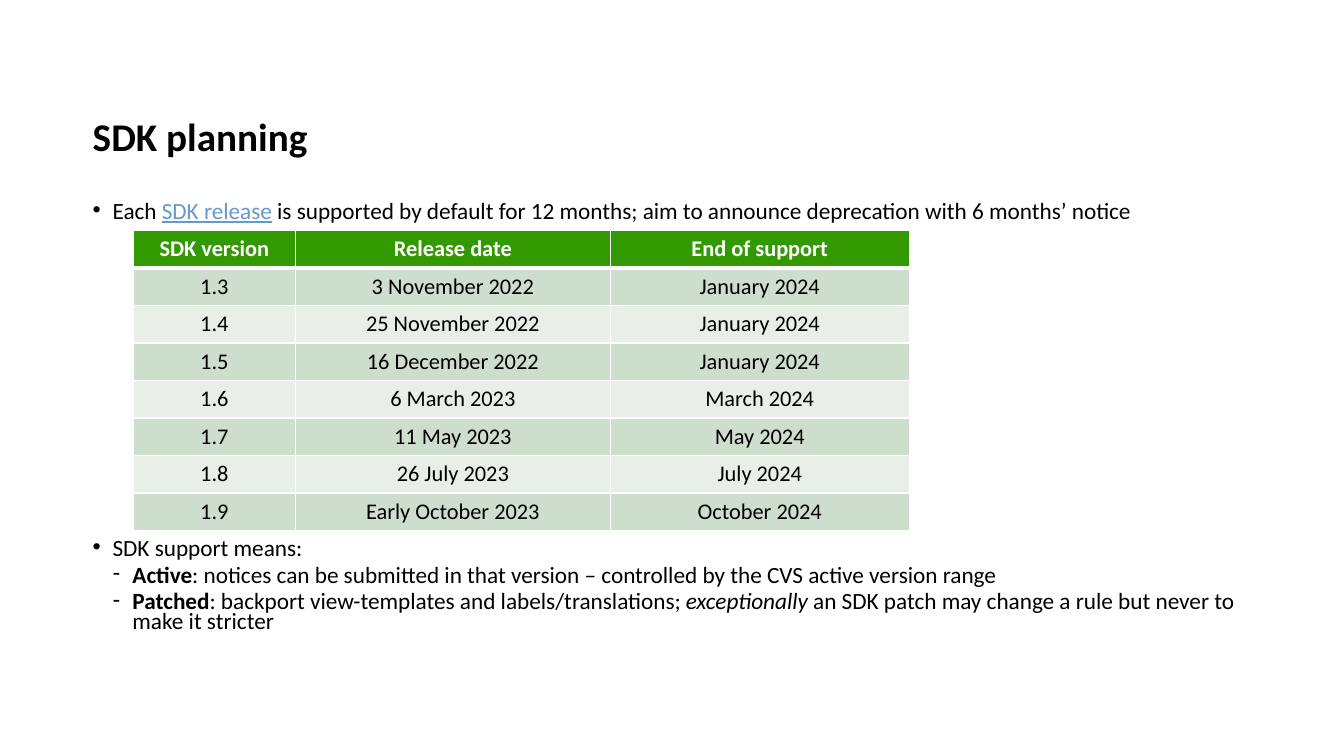
"""Build the SDK planning slide."""
from lxml.etree import SubElement
from pptx import Presentation
from pptx.dml.color import RGBColor as RGB
from pptx.enum.text import MSO_ANCHOR as Anchor, MSO_AUTO_SIZE as AutoSize, PP_ALIGN as Align
from pptx.oxml.ns import qn
from pptx.util import Inches, Pt

COLORS = {"text": "000000", "white": "FFFFFF", "link": "6699CC",
          "head": "339900", "odd": "CEDECC", "even": "E8EFE7"}
RELEASES = [
    ("SDK version", "Release date", "End of support"),
    ("1.3", "3 November 2022", "January 2024"),
    ("1.4", "25 November 2022", "January 2024"),
    ("1.5", "16 December 2022", "January 2024"),
    ("1.6", "6 March 2023", "March 2024"),
    ("1.7", "11 May 2023", "May 2024"),
    ("1.8", "26 July 2023", "July 2024"),
    ("1.9", "Early October 2023", "October 2024"),
]
POINTS = [
    (0, 0, [("Each ", ""), ("SDK release", "link"),
            (" is supported by default for 12 months; aim to announce "
             "deprecation with 6 months’ notice", "")]),
    (0, 227, [("SDK support means:", "")]),
    (1, 5, [("Active", "bold"),
            (": notices can be submitted in that version – controlled by "
             "the CVS active version range", "")]),
    (1, 5, [("Patched", "bold"),
            (": backport view-templates and labels/translations; ", ""),
            ("exceptionally ", "italic"),
            ("an SDK patch may change a rule but never to make it stricter", "")]),
]


class Deck:
    """Hold the style and the current slide; lengths are percent of the slide."""

    font = "Calibri"

    def __init__(self):
        self.prs = Presentation()
        self.prs.slide_width, self.prs.slide_height = Inches(13.333), Inches(7.5)
        self.s = self.prs.slides.add_slide(self.prs.slide_layouts[1])

    def x(self, share):
        return int(self.prs.slide_width * share / 100)

    def y(self, share):
        return int(self.prs.slide_height * share / 100)

    def style(self, r, size, color="text", bold=False):
        r.font.name, r.font.size, r.font.bold = self.font, Pt(size), bold
        r.font.color.rgb = RGB.from_string(COLORS[color])

    def place(self, sp, left, top, width, height, right_inset):
        sp.left, sp.top = self.x(left), self.y(top)
        sp.width, sp.height = self.x(width), self.y(height)
        tf = sp.text_frame
        tf.word_wrap, tf.auto_size = True, AutoSize.NONE
        tf.margin_left, tf.margin_right = 0, Inches(right_inset)
        tf.margin_top = Inches(0.05)
        return tf

    def title(self, text, *box):
        tf = self.place(self.s.shapes.title, *box, 0)
        tf.margin_bottom, tf.vertical_anchor = 0, Anchor.BOTTOM
        tf.text = text
        p = tf.paragraphs[0]
        p.alignment, p.line_spacing = Align.LEFT, 0.9
        self.style(p.runs[0], 28, bold=True)

    def bullets(self, points, *box):
        tf = self.place(self.s.placeholders[1], *box, 0.1)
        tf.margin_bottom, tf.vertical_anchor = Inches(0.05), Anchor.TOP
        for i, (level, before, runs) in enumerate(points):
            p = tf.add_paragraph() if i else tf.paragraphs[0]
            pPr = p._p.get_or_add_pPr()
            pPr.set("marL", str(Inches(0.197 * (level + 1))))
            pPr.set("indent", str(-Inches(0.197)))
            SubElement(pPr, qn("a:buFont"), typeface="Arial")
            SubElement(pPr, qn("a:buChar"), char="•-"[level])
            p.level, p.line_spacing, p.space_before = level, 0.7, Pt(before)
            for text, look in runs:
                r = p.add_run()
                r.text = text
                self.style(r, 16.6, "link" if look == "link" else "text", look == "bold")
                r.font.italic, r.font.underline = look == "italic", look == "link"

    def border(self, cell, side, width):
        ln = SubElement(cell._tc.get_or_add_tcPr(), qn(f"a:ln{side}"), w=str(Pt(width)))
        fill = SubElement(ln, qn("a:solidFill"))
        SubElement(fill, qn("a:srgbClr"), val=COLORS["white"])

    def table(self, rows, left, top, widths, row_height):
        frame = self.s.shapes.add_table(
            len(rows), len(widths), self.x(left), self.y(top),
            self.x(sum(widths)), self.y(row_height * len(rows)))
        tbl = frame.table
        for col, width in zip(tbl.columns, widths):
            col.width = self.x(width)
        for i, row in enumerate(rows):
            tbl.rows[i].height = self.y(row_height)
            fill = ("even", "odd")[i % 2] if i else "head"
            for j, text in enumerate(row):
                cell = tbl.cell(i, j)
                for side in "LRTB":
                    thick = (i, side) in ((0, "B"), (1, "T"))
                    self.border(cell, side, 3 if thick else 1)
                cell.fill.solid()
                cell.fill.fore_color.rgb = RGB.from_string(COLORS[fill])
                cell.text_frame.text = text
                p = cell.text_frame.paragraphs[0]
                p.alignment = Align.CENTER
                self.style(p.runs[0], 16, "text" if i else "white", i == 0)


def main():
    deck = Deck()
    deck.title("SDK planning", 6.9, 1.87, 86.1, 19.33)
    deck.bullets(POINTS, 6.9, 26.27, 86.1, 61.6)
    deck.table(RELEASES, 9.9, 30.5, (12.1, 23.4, 22.27), 4.95)
    deck.prs.save("out.pptx")


if __name__ == "__main__":
    main()
